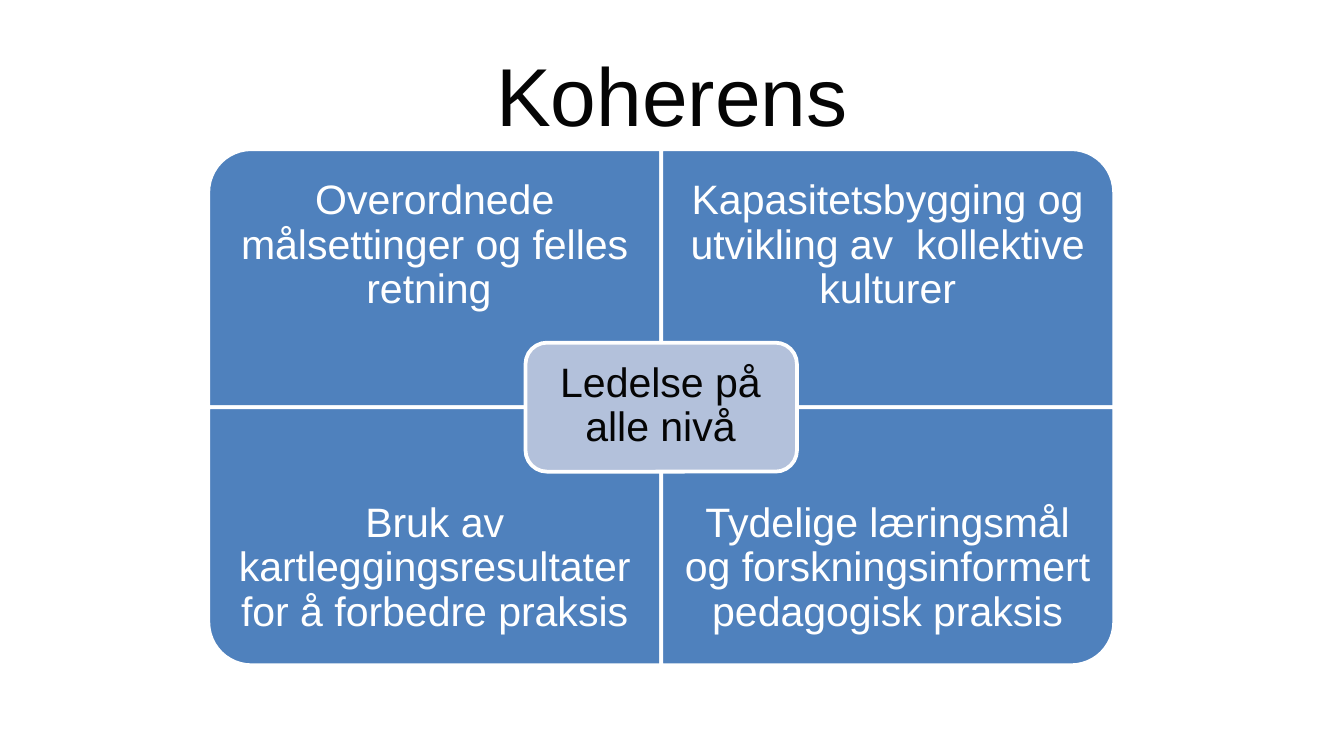
import pptx
import pptx.util
import pptx.dml.color
import pptx.enum.shapes
import pptx.enum.text

Inches = pptx.util.Inches
Pt = pptx.util.Pt
SHAPES = pptx.enum.shapes.MSO_SHAPE

COLORS = {"quadrant": "4F81BD", "center": "B3C1DB", "line": "FFFFFF",
          "light": "FFFFFF", "dark": "050505"}


def add_panel(geometry, left, top, width, height, fill, rotation=0):
    panel = slide.shapes.add_shape(
        geometry, Inches(left), Inches(top), Inches(width), Inches(height))
    panel.rotation = rotation
    panel.shadow.inherit = False
    panel.fill.solid()
    panel.fill.fore_color.rgb = pptx.dml.color.RGBColor.from_string(COLORS[fill])
    panel.line.color.rgb = pptx.dml.color.RGBColor.from_string(COLORS["line"])
    panel.line.width = Pt(2)


def write_text(box, text, size, color, inset, spacing):
    frame = box.text_frame
    frame.text = text
    frame_format = {
        "word_wrap": True,
        "auto_size": pptx.enum.text.MSO_AUTO_SIZE.NONE,
        "vertical_anchor": pptx.enum.text.MSO_ANCHOR.MIDDLE,
        "margin_left": Inches(inset), "margin_right": Inches(inset),
        "margin_top": Inches(inset), "margin_bottom": Inches(inset),
    }
    for name, value in frame_format.items():
        setattr(frame, name, value)
    paragraph = frame.paragraphs[0]
    paragraph.alignment = pptx.enum.text.PP_ALIGN.CENTER
    paragraph.line_spacing = spacing
    font = paragraph.runs[0].font
    for name, value in {"name": "Arial", "size": Pt(size)}.items():
        setattr(font, name, value)
    font.color.rgb = pptx.dml.color.RGBColor.from_string(COLORS[color])


presentation = pptx.Presentation()
presentation.slide_width = Inches(10)
presentation.slide_height = Inches(10 * 9 / 16)
slide = presentation.slides.add_slide(presentation.slide_layouts[5])

heading = slide.shapes.title
heading_place = {"left": 0.5, "top": 0.23, "width": 9, "height": 0.94}
for name, value in heading_place.items():
    setattr(heading, name, Inches(value))
write_text(heading, "Koherens", 44, "dark", 0.05, 1.0)

matrix_left, matrix_top = 1.55, 1.11
quadrant_width, quadrant_height = 3.37, 1.92
label_height = 1.44

quadrants = [
    (0, 0, 270, "Overordnede målsettinger og felles retning "),
    (1, 0, 0, "Kapasitetsbygging og utvikling av  kollektive kulturer"),
    (0, 1, 180, "Bruk av kartleggingsresultater for å forbedre praksis"),
    (1, 1, 90, "Tydelige læringsmål og forskningsinformert pedagogisk praksis"),
]
for column, row, rotation, label in quadrants:
    left = matrix_left + column * quadrant_width
    top = matrix_top + row * quadrant_height
    width, height = quadrant_width, quadrant_height
    if rotation in (90, 270):
        width, height = height, width
    add_panel(SHAPES.ROUND_1_RECTANGLE,
              left + (quadrant_width - width) / 2,
              top + (quadrant_height - height) / 2,
              width, height, "quadrant", rotation)
    label_top = top + row * (quadrant_height - label_height)
    label_box = slide.shapes.add_textbox(
        Inches(left), Inches(label_top), Inches(quadrant_width), Inches(label_height))
    write_text(label_box, label, 22, "light", 0.17, 0.9)

add_panel(SHAPES.ROUNDED_RECTANGLE, 3.91, 2.55, 2.02, 0.96, "center")
center_box = slide.shapes.add_textbox(
    Inches(3.95), Inches(2.59), Inches(1.93), Inches(0.87))
write_text(center_box, "Ledelse på alle nivå", 22, "dark", 0.09, 0.9)

presentation.save("out.pptx")
